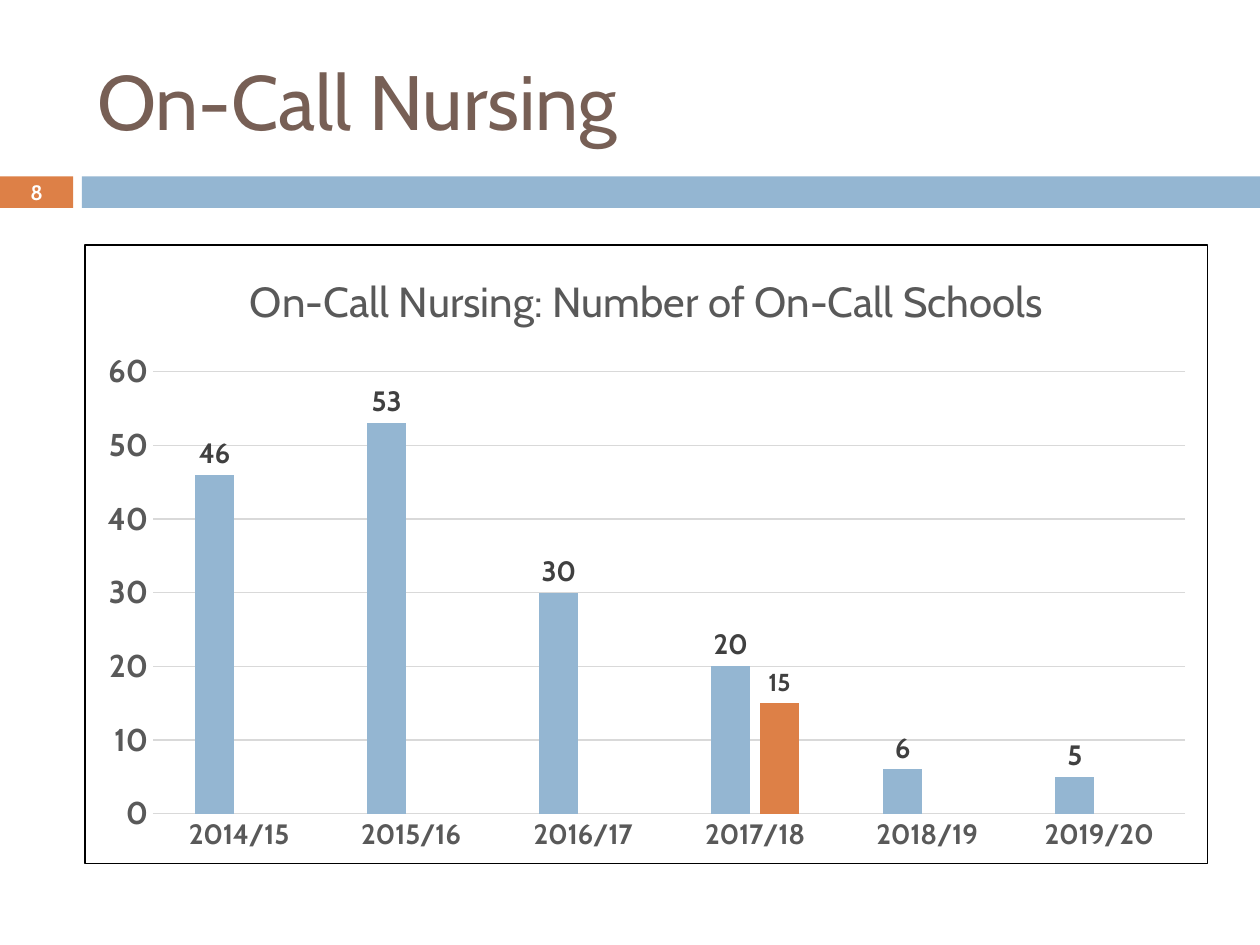
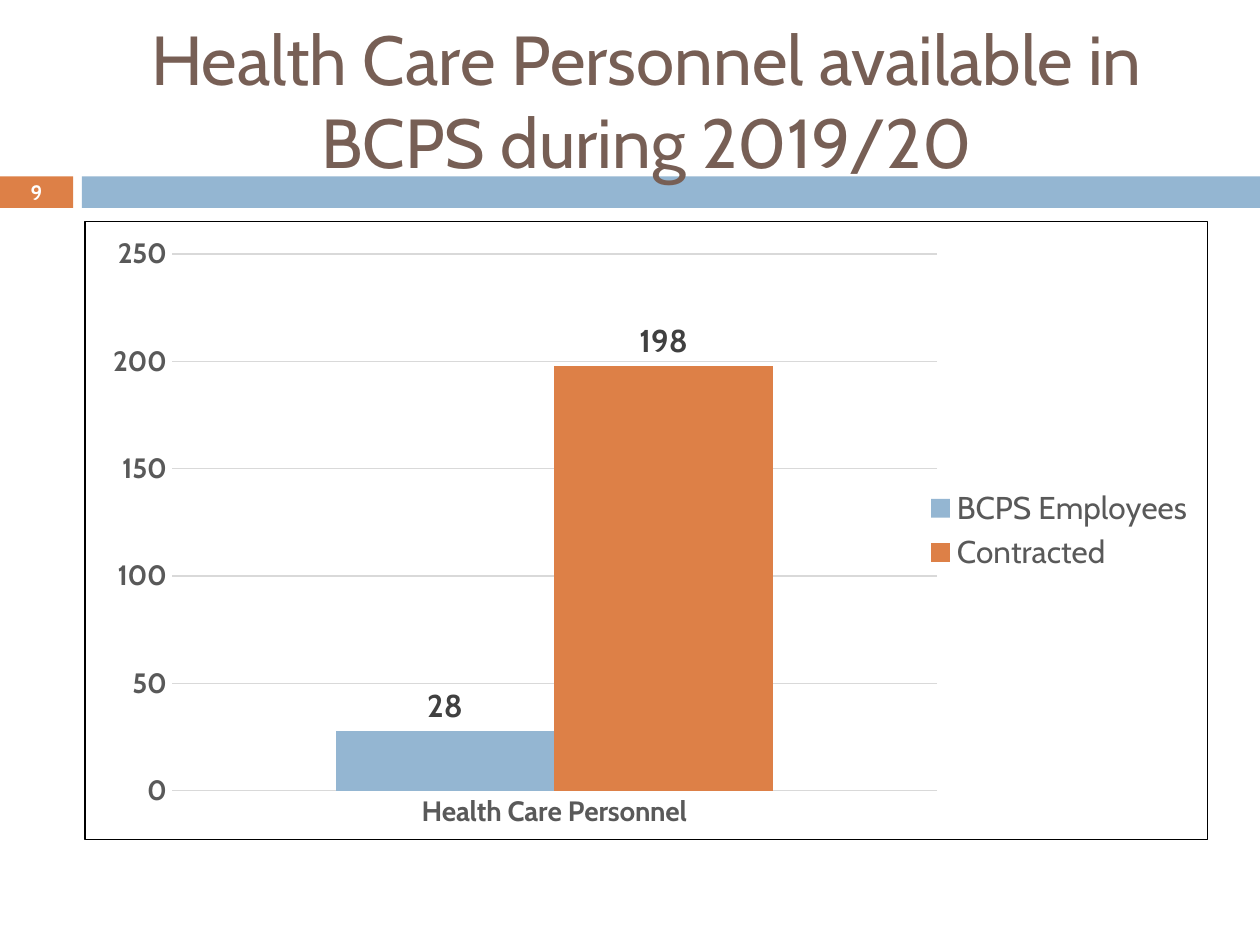
"""Build two slides on on-call nursing and health care personnel."""
from dataclasses import dataclass
from typing import Optional

import lxml.etree
import pptx
import pptx.chart.axis
import pptx.chart.chart
import pptx.chart.data
import pptx.chart.series
import pptx.dml.color
import pptx.dml.line
import pptx.enum.chart
import pptx.enum.shapes
import pptx.enum.text
import pptx.oxml
import pptx.oxml.ns
import pptx.slide
import pptx.text.text
import pptx.util

RGBColor = pptx.dml.color.RGBColor
Inches = pptx.util.Inches
Pt = pptx.util.Pt
Align = pptx.enum.text.PP_ALIGN

FONT = "Cabin"
BLUE = RGBColor(0x94, 0xB6, 0xD2)
ORANGE = RGBColor(0xDD, 0x80, 0x47)
BROWN = RGBColor(0x77, 0x5F, 0x55)
WHITE = RGBColor(0xFF, 0xFF, 0xFF)
BLACK = RGBColor(0x00, 0x00, 0x00)
AXIS_GRAY = RGBColor(0x59, 0x59, 0x59)
LABEL_GRAY = RGBColor(0x40, 0x40, 0x40)
GRID_GRAY = RGBColor(0xD9, 0xD9, 0xD9)
HAIRLINE = Pt(0.75)
CONTENT_LEFT, CONTENT_WIDTH = 0.67, 8.92


@dataclass(frozen=True)
class Band:
    """A coloured bar under the title."""

    left: float
    width: float
    color: RGBColor


@dataclass(frozen=True)
class Measure:
    """One series of columns with the size of its labels."""

    name: str
    values: tuple[Optional[int], ...]
    color: RGBColor
    label_size: int


@dataclass(frozen=True)
class ColumnChart:
    """A bordered column chart."""

    top: float
    categories: tuple[str, ...]
    measures: tuple[Measure, ...]
    value_size: int
    maximum: int
    step: int
    gap: int
    overlap: int = 0
    heading: str = ""
    baseline: bool = False
    legend: bool = False
    plot: Optional[tuple[float, float, float, float]] = None


@dataclass(frozen=True)
class Page:
    """A numbered slide with a title and a chart."""

    number: int
    title: str
    title_size: float
    title_align: Align
    chart: ColumnChart


NUMBER_BAND = Band(0, 0.58, ORANGE)
BANDS = (NUMBER_BAND, Band(0.65, 9.35, BLUE))

PAGES = (
    Page(8, "On-Call Nursing", 44, Align.LEFT, ColumnChart(
        top=1.94,
        categories=("2014/15", "2015/16", "2016/17", "2017/18", "2018/19", "2019/20"),
        measures=(
            Measure("Series 1", (46, 53, 30, 20, 6, 5), BLUE, 16),
            Measure("Series 2", (None, None, None, 15, None, None), ORANGE, 14),
        ),
        value_size=18, maximum=60, step=10, gap=219, overlap=-27,
        heading="On-Call Nursing: Number of On-Call Schools", baseline=True,
    )),
    Page(9, "Health Care Personnel available in BCPS during 2019/20", 39.6, Align.CENTER, ColumnChart(
        top=1.75,
        categories=("Health Care Personnel",),
        measures=(
            Measure("BCPS Employees", (28,), BLUE, 18),
            Measure("Contracted", (198,), ORANGE, 18),
        ),
        value_size=16, maximum=250, step=50, gap=150, legend=True,
        plot=(0.077, 0.053, 0.682, 0.868),
    )),
)


def style_font(font: pptx.text.text.Font, size: float, color: RGBColor, bold: bool = False) -> None:
    """Set the shared typeface with a size, colour and weight."""
    font.name, font.size, font.bold = FONT, Pt(size), bold
    font.color.rgb = color


def write_line(frame: pptx.text.text.TextFrame, text: str, size: float, color: RGBColor,
               align: Align, bold: bool = False) -> None:
    """Write one wrapped, vertically centred paragraph."""
    frame.word_wrap = True
    frame.auto_size = pptx.enum.text.MSO_AUTO_SIZE.NONE
    frame.vertical_anchor = pptx.enum.text.MSO_ANCHOR.MIDDLE
    paragraph = frame.paragraphs[0]
    paragraph.alignment = align
    run = paragraph.add_run()
    run.text = text
    style_font(run.font, size, color, bold)


def add_bands(slide: pptx.slide.Slide) -> None:
    """Draw the bars shared by every slide."""
    for band in BANDS:
        bar = slide.shapes.add_shape(
            pptx.enum.shapes.MSO_SHAPE.RECTANGLE,
            Inches(band.left), Inches(1.4), Inches(band.width), Inches(0.25))
        bar.shadow.inherit = False
        bar.fill.solid()
        bar.fill.fore_color.rgb = band.color
        bar.line.fill.background()


def place_title(slide: pptx.slide.Slide, page: Page) -> None:
    """Format the title and bring it in front of the bars."""
    title = slide.shapes.title
    title.left, title.top = Inches(CONTENT_LEFT), Inches(0.25)
    title.width, title.height = Inches(CONTENT_WIDTH), Inches(1.08)
    write_line(title.text_frame, page.title, page.title_size, BROWN, page.title_align)
    slide.shapes.element.append(title.element)


def add_number(slide: pptx.slide.Slide, number: int) -> None:
    """Write the slide number on its bar."""
    number_box = slide.shapes.add_textbox(
        Inches(NUMBER_BAND.left), Inches(1.39), Inches(NUMBER_BAND.width), Inches(0.27))
    frame = number_box.text_frame
    frame.margin_left = frame.margin_right = frame.margin_top = frame.margin_bottom = 0
    write_line(frame, str(number), 11.9, WHITE, Align.CENTER, bold=True)


def rule_line(line: pptx.dml.line.LineFormat) -> None:
    """Give a line the pale grid style."""
    line.color.rgb = GRID_GRAY
    line.width = HAIRLINE


def style_axes(chart: pptx.chart.chart.Chart, design: ColumnChart) -> None:
    """Format both axes and the gridlines."""
    for axis, size in ((chart.category_axis, 16), (chart.value_axis, design.value_size)):
        axis.major_tick_mark = axis.minor_tick_mark = pptx.enum.chart.XL_TICK_MARK.NONE
        style_font(axis.tick_labels.font, size, AXIS_GRAY, bold=True)
        axis.format.line.fill.background()
    if design.baseline:
        rule_line(chart.category_axis.format.line)
    values = chart.value_axis
    values.minimum_scale, values.maximum_scale, values.major_unit = 0, design.maximum, design.step
    values.has_major_gridlines = True
    rule_line(values.major_gridlines.format.line)


def style_series(series: pptx.chart.series.BarSeries, measure: Measure) -> None:
    """Colour a series and label its columns."""
    series.format.fill.solid()
    series.format.fill.fore_color.rgb = measure.color
    labels = series.data_labels
    labels.show_value = True
    labels.position = pptx.enum.chart.XL_LABEL_POSITION.OUTSIDE_END
    style_font(labels.font, measure.label_size, LABEL_GRAY, bold=True)


def add_border(chart: pptx.chart.chart.Chart) -> None:
    """Frame the chart area with a thin black line."""
    border = pptx.oxml.parse_xml(
        f'<c:spPr {pptx.oxml.ns.nsdecls("c", "a")}><a:noFill/><a:ln w="{HAIRLINE}">'
        f'<a:solidFill><a:srgbClr val="{BLACK}"/></a:solidFill></a:ln></c:spPr>')
    chart.element.find(pptx.oxml.ns.qn("c:chart")).addnext(border)


def fix_plot(chart: pptx.chart.chart.Chart, plot: tuple[float, float, float, float]) -> None:
    """Pin the inner plot area to fractions of the chart."""
    qn = pptx.oxml.ns.qn
    area = chart.element.find(f'{qn("c:chart")}/{qn("c:plotArea")}')
    for automatic in area.findall(qn("c:layout")):
        area.remove(automatic)
    layout = lxml.etree.Element(qn("c:layout"))
    manual = lxml.etree.SubElement(layout, qn("c:manualLayout"))
    settings = [("layoutTarget", "inner"), ("xMode", "edge"), ("yMode", "edge"), *zip("xywh", plot)]
    for tag, value in settings:
        lxml.etree.SubElement(manual, qn(f"c:{tag}"), val=str(value))
    area.insert(0, layout)


def add_column_chart(slide: pptx.slide.Slide, design: ColumnChart) -> None:
    """Draw a column chart from its description."""
    data = pptx.chart.data.CategoryChartData()
    data.categories = design.categories
    for measure in design.measures:
        data.add_series(measure.name, measure.values)
    chart = slide.shapes.add_chart(
        pptx.enum.chart.XL_CHART_TYPE.COLUMN_CLUSTERED, Inches(CONTENT_LEFT), Inches(design.top),
        Inches(CONTENT_WIDTH), Inches(4.92), data).chart
    style_font(chart.font, 10, BLACK)
    columns = chart.plots[0]
    columns.vary_by_categories = False
    columns.gap_width, columns.overlap = design.gap, design.overlap
    for series, measure in zip(columns.series, design.measures):
        style_series(series, measure)
    style_axes(chart, design)
    chart.has_title = bool(design.heading)
    if design.heading:
        heading = chart.chart_title.text_frame.paragraphs[0].add_run()
        heading.text = design.heading
        style_font(heading.font, 24, AXIS_GRAY)
    chart.has_legend = design.legend
    if design.legend:
        chart.legend.position = pptx.enum.chart.XL_LEGEND_POSITION.RIGHT
        chart.legend.include_in_layout = False
        style_font(chart.legend.font, 18, AXIS_GRAY)
    if design.plot:
        fix_plot(chart, design.plot)
    add_border(chart)


def main() -> None:
    """Build and save the presentation."""
    deck = pptx.Presentation()
    deck.slide_width, deck.slide_height = Inches(10), Inches(7.5)
    title_only = deck.slide_layouts.get_by_name("Title Only")
    for page in PAGES:
        slide = deck.slides.add_slide(title_only)
        add_bands(slide)
        place_title(slide, page)
        add_column_chart(slide, page.chart)
        add_number(slide, page.number)
    deck.save("out.pptx")


if __name__ == "__main__":
    main()
